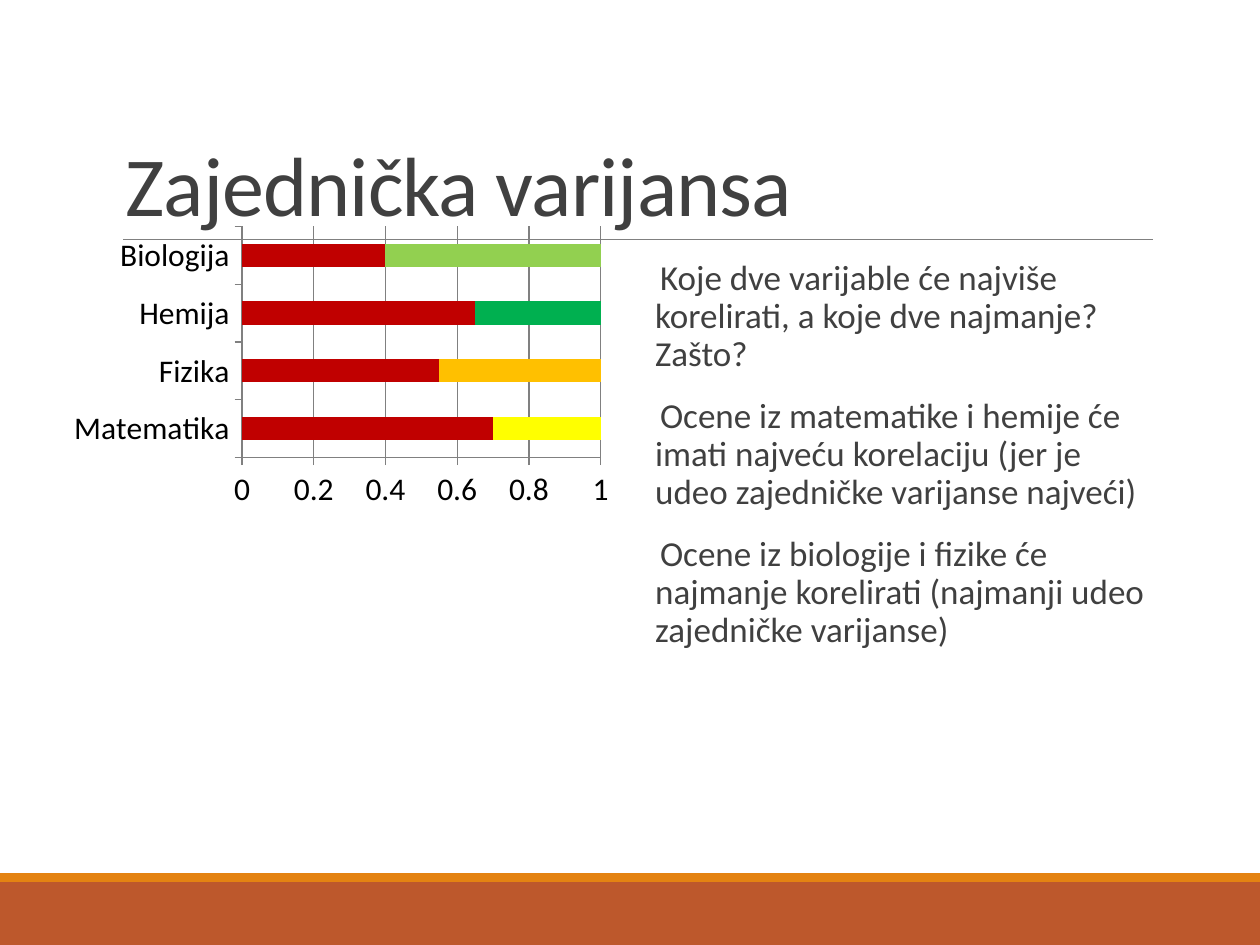
from pptx import Presentation
from pptx.chart.data import CategoryChartData
from pptx.dml.color import RGBColor
from pptx.enum.chart import XL_CHART_TYPE, XL_TICK_MARK
from pptx.enum.shapes import MSO_CONNECTOR, MSO_SHAPE
from pptx.enum.text import MSO_ANCHOR
from pptx.oxml.ns import qn
from pptx.util import Inches, Pt
from lxml import etree

BAR_100 = XL_CHART_TYPE.BAR_STACKED_100
TICK_OUT, TICK_NONE = XL_TICK_MARK.OUTSIDE, XL_TICK_MARK.NONE
STRAIGHT, RECT = MSO_CONNECTOR.STRAIGHT, MSO_SHAPE.RECTANGLE
BOTTOM, TOP = MSO_ANCHOR.BOTTOM, MSO_ANCHOR.TOP
FONT, TEXT, GREY = "Calibri", "404040", "808080"


def rgb(value):
    return RGBColor.from_string(value)


def add_text(box, anchor, side_inset, paragraphs, size, para_format):
    sp = s.shapes.add_textbox(*[Inches(v) for v in box])
    tf = sp.text_frame
    frame_format = {"word_wrap": True, "vertical_anchor": anchor,
                    "margin_left": Inches(side_inset), "margin_right": Inches(side_inset)}
    for name, value in frame_format.items():
        setattr(tf, name, value)
    for i, text in enumerate(paragraphs):
        p = tf.add_paragraph() if i else tf.paragraphs[0]
        for name, value in para_format.items():
            setattr(p, name, value)
        r = p.add_run()
        r.text = text
        r.font.name, r.font.size = FONT, Pt(size)
        r.font.color.rgb = rgb(TEXT)
    return tf


prs = Presentation()
prs.slide_width, prs.slide_height = Inches(10), Inches(7.5)
s = prs.slides.add_slide(prs.slide_layouts[6])

# Footer bands
for top, height, color in [(7, 0.5, "BD582C"), (6.93, 0.07, "E48312")]:
    sp = s.shapes.add_shape(RECT, 0, Inches(top), prs.slide_width, Inches(height))
    sp.shadow.inherit = False
    sp.fill.solid()
    sp.fill.fore_color.rgb = rgb(color)
    sp.line.fill.background()

# Rule under the title
rule = s.shapes.add_connector(STRAIGHT, Inches(0.98), Inches(1.9), Inches(9.15), Inches(1.9))
rule.line.color.rgb = rgb(GREY)
rule.line.width = Pt(0.5)
etree.SubElement(rule._element.spPr, qn("a:effectLst"))

# Title
tf = add_text((0.9, 0.31, 8.25, 1.59), BOTTOM, 0.1, ["Zajednička varijansa"], 48,
              {"line_spacing": 0.85})
tf.paragraphs[0].runs[0].font._element.set("spc", "-50")

# Stacked bar chart: shared variance first, specific variance second
data = CategoryChartData()
data.categories = ["Matematika", "Fizika", "Hemija", "Biologija"]
data.add_series("Series 1", [70, 55, 65, 40])
data.add_series("Series 2", [30, 45, 35, 60])
chart = s.shapes.add_chart(BAR_100, Inches(0.5), Inches(1.75), Inches(4.42), Inches(2.33),
                           data).chart
chart.has_legend = chart.has_title = False
chart.font.name, chart.font.size = FONT, Pt(18)
chart.font.color.rgb = rgb("000000")

plot = chart.plots[0]
plot.gap_width, plot.overlap, plot.vary_by_categories = 150, 100, False
shared, specific = plot.series
fills = [(shared, "C00000"), (specific, "FFFF00")]
fills += [(specific.points[i], color)
          for i, color in enumerate(["FFC000", "00B050", "92D050"], start=1)]
for target, color in fills:
    target.format.fill.solid()
    target.format.fill.fore_color.rgb = rgb(color)

chart.value_axis.has_major_gridlines = True
chart.category_axis.has_major_gridlines = False
for axis in (chart.category_axis, chart.value_axis):
    axis.major_tick_mark, axis.minor_tick_mark = TICK_OUT, TICK_NONE
    axis.tick_labels.number_format = "General"
    axis.tick_labels.number_format_is_linked = False
for lined in (chart.category_axis, chart.value_axis, chart.value_axis.major_gridlines):
    lined.format.line.color.rgb = rgb(GREY)
    lined.format.line.width = Pt(0.75)

# Questions and answers
tf = add_text((5.1, 2.02, 4.05, 4.4), TOP, 0, [
    "Koje dve varijable će najviše korelirati, a koje dve najmanje? Zašto?",
    "Ocene iz matematike i hemije će imati najveću korelaciju (jer je udeo zajedničke "
    "varijanse najveći)",
    "Ocene iz biologije i fizike će najmanje korelirati (najmanji udeo zajedničke varijanse)",
], 20, {"line_spacing": 0.9, "space_before": Pt(12), "space_after": Pt(2)})
for p in tf.paragraphs:
    pPr = p._p.get_or_add_pPr()
    pPr.set("marL", str(Inches(0.1)))
    pPr.set("indent", str(Inches(-0.1)))
    bullet_color = etree.SubElement(pPr, qn("a:buClr"))
    etree.SubElement(bullet_color, qn("a:srgbClr"), val="E48312")
    etree.SubElement(pPr, qn("a:buChar"), char=" ")

prs.save("out.pptx")
